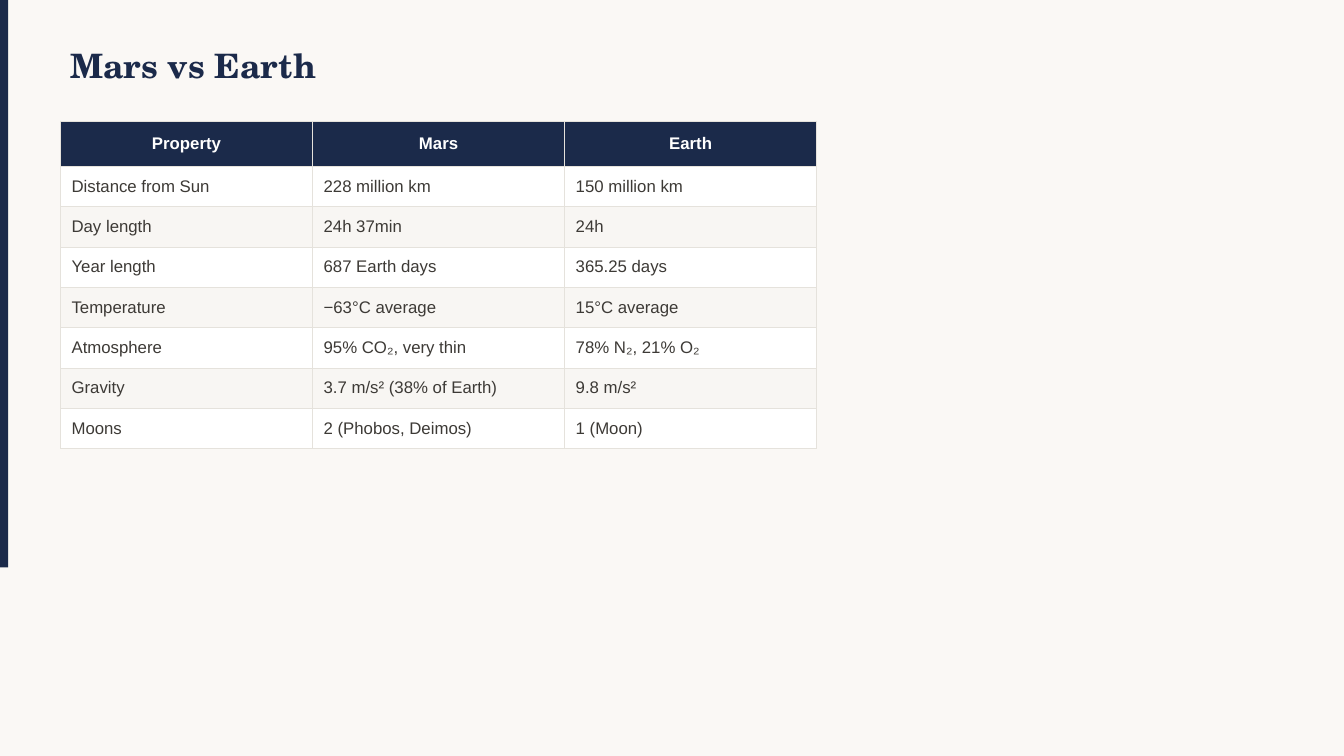
import pptx
import pptx.dml.color
import pptx.enum.shapes
import pptx.enum.text
import pptx.oxml
import pptx.oxml.ns
import pptx.util
from pptx.util import Inches

# Content
TITLE = "Mars vs Earth"
ROWS = [
    ("Property", "Mars", "Earth"),
    ("Distance from Sun", "228 million km", "150 million km"),
    ("Day length", "24h 37min", "24h"),
    ("Year length", "687 Earth days", "365.25 days"),
    ("Temperature", "−63°C average", "15°C average"),
    ("Atmosphere", "95% CO₂, very thin", "78% N₂, 21% O₂"),
    ("Gravity", "3.7 m/s² (38% of Earth)", "9.8 m/s²"),
    ("Moons", "2 (Phobos, Deimos)", "1 (Moon)"),
]

# Theme and sizes
THEME = {
    "page": "FAF8F5", "navy": "1B2A4A", "white": "FFFFFF",
    "band": "F8F6F3", "ink": "3D3A36", "rule": "E5E2DC",
    "serif": "TeX Gyre Schola", "sans": "Arial",
    "title": 24, "body": 12, "line": 0.5,
}
LEFT, TOP = 0.6, 1.2
COL, HEAD, ROW = 2.5, 0.45, 0.4
PAD_X, PAD_Y = 0.11, 0.06
MIDDLE = pptx.enum.text.MSO_ANCHOR.MIDDLE
ALIGN = pptx.enum.text.PP_ALIGN


def paint(fill, name):
    fill.solid()
    fill.fore_color.rgb = pptx.dml.color.RGBColor.from_string(THEME[name])


def write(para, text, face, size, color, bold):
    run = para.add_run()
    run.text = text
    font = run.font
    font.name = THEME[face]
    font.size = pptx.util.Pt(THEME[size])
    font.bold = bold
    paint(font.fill, color)


def edge(cell):
    props = cell._tc.get_or_add_tcPr()
    width = pptx.util.Pt(THEME["line"])
    for i, side in enumerate(("lnL", "lnR", "lnT", "lnB")):
        line = pptx.oxml.parse_xml(
            f'<a:{side} {pptx.oxml.ns.nsdecls("a")} w="{width}"><a:solidFill>'
            f'<a:srgbClr val="{THEME["rule"]}"/></a:solidFill></a:{side}>')
        props.insert(i, line)


def add_bar(slide):
    bar = slide.shapes.add_shape(
        pptx.enum.shapes.MSO_SHAPE.RECTANGLE, 0, 0, Inches(0.08), Inches(5.63))
    bar.shadow.inherit = False
    paint(bar.fill, "navy")
    bar.line.fill.background()


def add_title(slide):
    box = slide.shapes.add_textbox(
        Inches(LEFT), Inches(0.3), Inches(10), Inches(0.7))
    frame = box.text_frame
    frame.word_wrap = True
    frame.vertical_anchor = MIDDLE
    write(frame.paragraphs[0], TITLE, "serif", "title", "navy", True)


def add_facts(slide):
    count, wide = len(ROWS), len(ROWS[0])
    table = slide.shapes.add_table(
        count, wide, Inches(LEFT), Inches(TOP), Inches(COL * wide),
        Inches(HEAD + ROW * (count - 1))).table
    for col in table.columns:
        col.width = Inches(COL)
    for r, row in enumerate(ROWS):
        head = r == 0
        table.rows[r].height = Inches(HEAD if head else ROW)
        back = "navy" if head else "white" if r % 2 else "band"
        for c, text in enumerate(row):
            cell = table.cell(r, c)
            cell.margin_left = cell.margin_right = Inches(PAD_X)
            cell.margin_top = cell.margin_bottom = Inches(PAD_Y)
            cell.vertical_anchor = MIDDLE
            paint(cell.fill, back)
            edge(cell)
            para = cell.text_frame.paragraphs[0]
            para.alignment = ALIGN.CENTER if head else ALIGN.LEFT
            write(para, text, "sans", "body", "white" if head else "ink", head)


def main():
    deck = pptx.Presentation()
    deck.slide_width, deck.slide_height = Inches(13.33), Inches(7.5)
    slide = deck.slides.add_slide(deck.slide_layouts[6])
    paint(slide.background.fill, "page")
    add_bar(slide)
    add_title(slide)
    add_facts(slide)
    deck.save("out.pptx")


if __name__ == "__main__":
    main()
